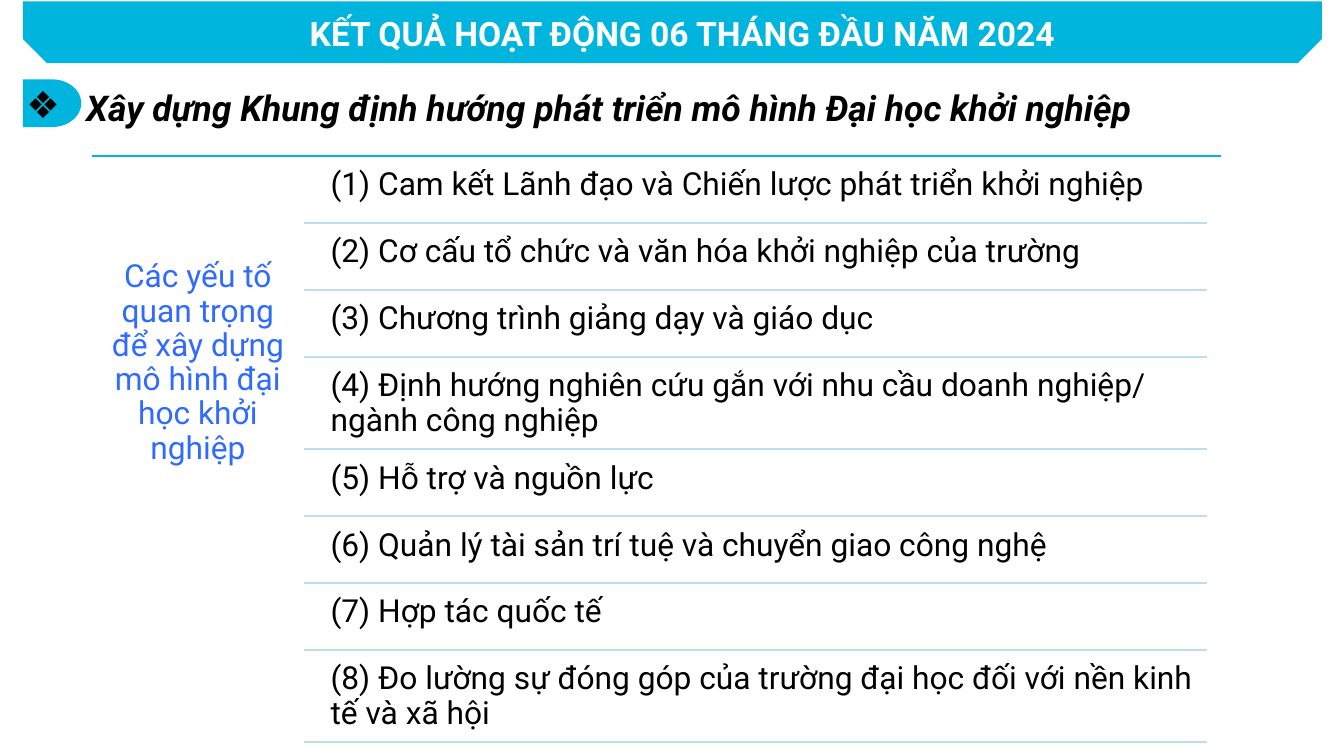
"""Build the slide on the key factors of an entrepreneurial university."""
from dataclasses import dataclass
from typing import Any

from lxml.etree import SubElement
from pptx import Presentation
from pptx.dml.color import RGBColor
from pptx.enum.shapes import MSO_CONNECTOR as Link, MSO_SHAPE as Form
from pptx.enum.text import MSO_ANCHOR as Anchor, PP_ALIGN as Align
from pptx.oxml.ns import qn
from pptx.util import Pt

CYAN = RGBColor(0x00, 0xB5, 0xDD)
PALE = RGBColor(0xBD, 0xDE, 0xEF)
BLUE = RGBColor(0x2F, 0x6B, 0xFF)
BLACK = RGBColor(0x00, 0x00, 0x00)
WHITE = RGBColor(0xFF, 0xFF, 0xFF)

FONT = "Roboto"
SHORT, TALL = 68.3, 95.6
GAP = 3.4
TOP = 170.6


@dataclass
class Box:
    left: float
    top: float
    width: float
    height: float

    def spans(self) -> list[Pt]:
        return [Pt(v) for v in (self.left, self.top, self.width, self.height)]


@dataclass
class Style:
    size: float
    color: RGBColor
    align: Align = Align.LEFT
    pad: tuple[float, float, float, float] = (10, 10, 10, 10)
    space: float = 0.9
    bold: bool = False
    italic: bool = False
    anchor: Anchor = Anchor.TOP


@dataclass
class Row:
    text: str
    height: float = SHORT


TITLE = Style(36, WHITE, Align.CENTER, (7.2, 3.6, 7.2, 3.6), 1, bold=True)
HEAD = Style(38, BLACK, Align.JUSTIFY, (6, 6, 6, 6), 1.3, bold=True, italic=True)
MARK = Style(40, BLACK, Align.CENTER, (0, 0, 10, 0), 1, anchor=Anchor.MIDDLE)
SIDE = Style(34, BLUE, Align.CENTER, (10, 112, 10, 10))
ITEM = Style(34, BLACK)

ROWS = [
    Row("(1) Cam kết Lãnh đạo và Chiến lược phát triển khởi nghiệp"),
    Row("(2) Cơ cấu tổ chức và văn hóa khởi nghiệp của trường"),
    Row("(3) Chương trình giảng dạy và giáo dục"),
    Row("(4) Định hướng nghiên cứu gắn với nhu cầu doanh nghiệp/ ngành công nghiệp", TALL),
    Row("(5) Hỗ trợ và nguồn lực"),
    Row("(6) Quản lý tài sản trí tuệ và chuyển giao công nghệ"),
    Row("(7) Hợp tác quốc tế"),
    Row("(8) Đo lường sự đóng góp của trường đại học đối với nền kinh tế và xã hội", TALL),
]


def apply(target: Any, values: dict[str, Any]) -> None:
    for name, value in values.items():
        setattr(target, name, value)


def write(shape: Any, text: str, style: Style) -> None:
    frame = shape.text_frame
    left, top, right, bottom = (Pt(v) for v in style.pad)
    apply(frame, {"word_wrap": True, "vertical_anchor": style.anchor,
                  "margin_left": left, "margin_top": top,
                  "margin_right": right, "margin_bottom": bottom})
    para = frame.paragraphs[0]
    apply(para, {"alignment": style.align, "line_spacing": style.space})
    run = para.add_run()
    run.text = text
    apply(run.font, {"name": FONT, "size": Pt(style.size),
                     "bold": style.bold, "italic": style.italic})
    run.font.color.rgb = style.color


def add_text(slide: Any, box: Box, text: str, style: Style) -> None:
    write(slide.shapes.add_textbox(*box.spans()), text, style)


def add_form(slide: Any, form: Form, box: Box) -> Any:
    shape = slide.shapes.add_shape(form, *box.spans())
    shape.shadow.inherit = False
    shape.fill.solid()
    shape.fill.fore_color.rgb = CYAN
    shape.line.fill.background()
    return shape


def add_rule(slide: Any, left: float, right: float, y: float, color: RGBColor) -> None:
    rule = slide.shapes.add_connector(Link.STRAIGHT, Pt(left), Pt(y), Pt(right), Pt(y))
    rule.line.color.rgb = color
    rule.line.width = Pt(2)
    SubElement(rule._element.spPr, qn("a:effectLst"))


def main() -> None:
    deck = Presentation()
    apply(deck, {"slide_width": Pt(1440), "slide_height": Pt(810)})
    slide = deck.slides.add_slide(deck.slide_layouts[6])

    banner = add_form(slide, Form.SNIP_2_SAME_RECTANGLE, Box(24.5, 1.4, 1391.8, 66.2))
    banner.adjustments[0] = 0.39
    banner.adjustments[1] = 0
    banner.rotation = 180
    add_text(slide, Box(40.3, 10.8, 1381.7, 51.1),
             "KẾT QUẢ HOẠT ĐỘNG 06 THÁNG ĐẦU NĂM 2024", TITLE)
    add_text(slide, Box(86.4, 72, 1234, 127.4),
             "Xây dựng Khung định hướng phát triển mô hình Đại học khởi nghiệp", HEAD)
    badge = add_form(slide, Form.FLOWCHART_DELAY, Box(24.5, 85, 62.6, 51.1))
    write(badge, "❖", MARK)

    add_rule(slide, 98.6, 1308.2, 167, CYAN)
    add_text(slide, Box(98.6, 167, 226.8, 632.2),
             "Các yếu tố quan trọng để xây dựng mô hình đại học khởi nghiệp", SIDE)
    top = TOP
    for row in ROWS:
        add_text(slide, Box(344.2, top, 949.7, row.height), row.text, ITEM)
        add_rule(slide, 325.4, 1293.1, top + row.height, PALE)
        top += row.height + GAP

    deck.save("out.pptx")


if __name__ == "__main__":
    main()
